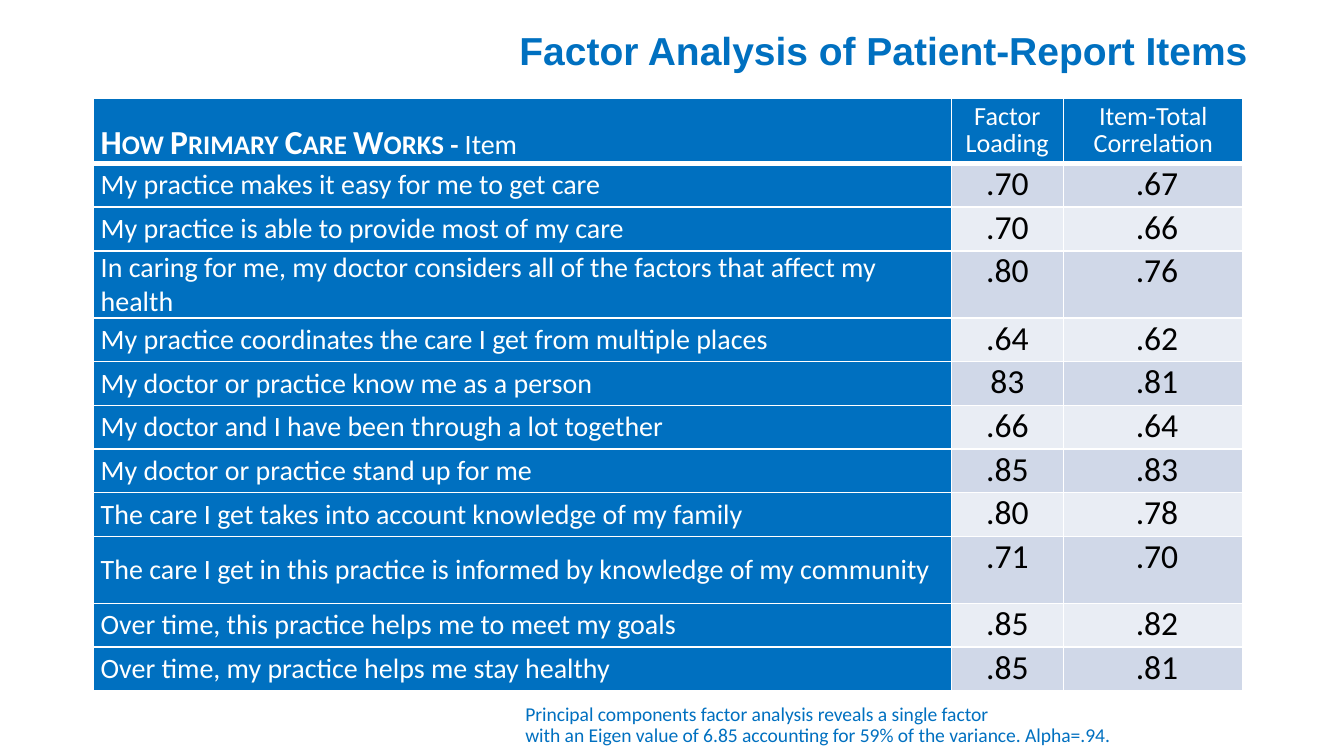
from dataclasses import dataclass

from lxml.etree import SubElement
from pptx import Presentation
from pptx.dml.color import RGBColor as RGB
from pptx.enum.text import MSO_ANCHOR as ANCHOR, MSO_AUTO_SIZE as AUTO, PP_ALIGN as ALIGN
from pptx.oxml.ns import qn
from pptx.util import Pt


@dataclass(frozen=True)
class Theme:
    blue: RGB = RGB(0x00, 0x70, 0xC0)
    white: RGB = RGB(0xFF, 0xFF, 0xFF)
    black: RGB = RGB(0, 0, 0)
    bands: tuple = (RGB(0xD0, 0xD8, 0xE8), RGB(0xE9, 0xED, 0xF4))
    title_font: str = "Arial"
    body_font: str = "Calibri"
    title: float = 20.9
    large: float = 18
    item: float = 15
    header: float = 14
    note: float = 10.5


THEME = Theme()
COLUMNS = (460, 60, 96.4)
HEADER_HEIGHT, ROW_HEIGHT, TALL_HEIGHT = 35, 23.4, 36
TALL_ROWS = (3, 9)
ITEMS = [
    ("My practice makes it easy for me to get care", ".70", ".67"),
    ("My practice is able to provide most of my care", ".70", ".66"),
    ("In caring for me, my doctor considers all of the factors that affect my health", ".80", ".76"),
    ("My practice coordinates the care I get from multiple places", ".64", ".62"),
    ("My doctor or practice know me as a person", "83", ".81"),
    ("My doctor and I have been through a lot together", ".66", ".64"),
    ("My doctor or practice stand up for me", ".85", ".83"),
    ("The care I get takes into account knowledge of my family", ".80", ".78"),
    ("The care I get in this practice is informed by knowledge of my community", ".71", ".70"),
    ("Over time, this practice helps me to meet my goals", ".85", ".82"),
    ("Over time, my practice helps me stay healthy", ".85", ".81"),
]


def style(r, size, color, name=THEME.body_font, bold=False):
    r.font.name = name
    r.font.size = Pt(size)
    r.font.bold = bold
    r.font.color.rgb = color


def add_title(s, text):
    sp = s.shapes.title
    sp.left, sp.top, sp.width, sp.height = Pt(243.4), Pt(13.7), Pt(465.8), Pt(26.6)
    tf = sp.text_frame
    tf.text = text
    tf.auto_size = AUTO.NONE
    tf.vertical_anchor = ANCHOR.MIDDLE
    p = tf.paragraphs[0]
    p.alignment = ALIGN.CENTER
    style(p.runs[0], THEME.title, THEME.blue, THEME.title_font, True)


def add_note(s, text):
    tf = s.shapes.add_textbox(Pt(274.3), Pt(373.7), Pt(368.6), Pt(30.2)).text_frame
    tf.word_wrap = True
    tf.vertical_anchor = ANCHOR.MIDDLE
    tf.text = text
    for p in tf.paragraphs:
        p.line_spacing = 0.9
        style(p.runs[0], THEME.note, THEME.blue)


def set_borders(cell, bottom):
    tc_pr = cell._tc.get_or_add_tcPr()
    for i, (side, width) in enumerate((("L", 1), ("R", 1), ("T", 1), ("B", bottom))):
        ln = SubElement(tc_pr, qn(f"a:ln{side}"), w=str(Pt(width)))
        fill = SubElement(ln, qn("a:solidFill"))
        SubElement(fill, qn("a:srgbClr"), val=str(THEME.white))
        tc_pr.insert(i, ln)


def fill_cell(cell, text, size, color, fill, align=ALIGN.LEFT, anchor=ANCHOR.MIDDLE, bottom=1):
    cell.margin_left = cell.margin_right = Pt(4.3)
    cell.margin_top = cell.margin_bottom = 0
    cell.vertical_anchor = anchor
    cell.fill.solid()
    cell.fill.fore_color.rgb = fill
    set_borders(cell, bottom)
    cell.text = text
    p = cell.text_frame.paragraphs[0]
    p.alignment = align
    style(p.runs[0], size, color)
    return p


def fill_header(cells):
    name, *measures = cells
    p = fill_cell(name, "How Primary Care Works - ", THEME.large, THEME.white, THEME.blue,
                  anchor=ANCHOR.BOTTOM, bottom=3)
    p.runs[0].font.bold = True
    p.runs[0].font._element.set("cap", "small")
    r = p.add_run()
    r.text = "Item"
    style(r, THEME.item, THEME.white)
    for cell, text in zip(measures, ("Factor Loading", "Item-Total Correlation")):
        p = fill_cell(cell, text, THEME.header, THEME.white, THEME.blue, ALIGN.CENTER, bottom=3)
        p.line_spacing = 0.85


def add_items_table(s):
    heights = [HEADER_HEIGHT] + [
        TALL_HEIGHT if n in TALL_ROWS else ROW_HEIGHT for n in range(1, len(ITEMS) + 1)]
    table = s.shapes.add_table(len(heights), len(COLUMNS), Pt(49.7), Pt(52.6),
                               Pt(sum(COLUMNS)), Pt(sum(heights))).table
    for column, width in zip(table.columns, COLUMNS):
        column.width = Pt(width)
    for row, height in zip(table.rows, heights):
        row.height = Pt(height)
    header, *rows = table.rows
    fill_header(header.cells)
    for n, (row, (item, loading, correlation)) in enumerate(zip(rows, ITEMS)):
        name, *measures = row.cells
        fill_cell(name, item, THEME.item, THEME.white, THEME.blue)
        for cell, value in zip(measures, (loading, "\N{NO-BREAK SPACE}" + correlation)):
            fill_cell(cell, value, THEME.large, THEME.black, THEME.bands[n % 2],
                      ALIGN.CENTER, ANCHOR.TOP)


def main():
    prs = Presentation()
    prs.slide_width, prs.slide_height = Pt(720), Pt(405)
    s = prs.slides.add_slide(prs.slide_layouts[5])
    add_title(s, "Factor Analysis of Patient-Report Items ")
    add_note(s, "Principal components factor analysis reveals a single factor\n"
                "with an Eigen value of 6.85 accounting for 59% of the variance. Alpha=.94.")
    add_items_table(s)
    prs.save("out.pptx")


if __name__ == "__main__":
    main()
